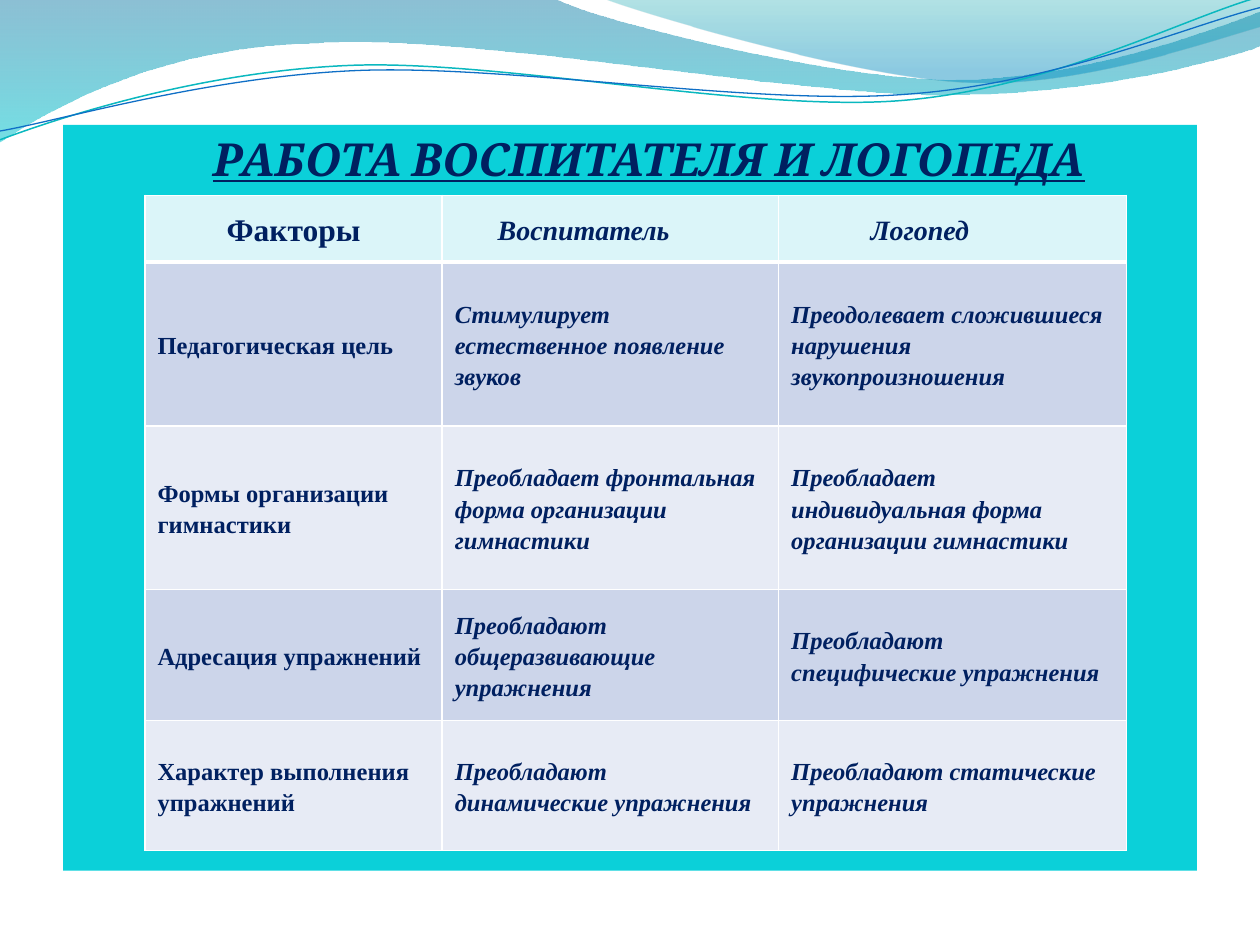
from math import cos, radians, sin

from lxml import etree
from pptx import Presentation
from pptx.dml.color import RGBColor
from pptx.enum.text import MSO_ANCHOR, MSO_AUTO_SIZE, PP_ALIGN
from pptx.oxml.ns import qn
from pptx.util import Inches, Pt

TOP, MIDDLE = MSO_ANCHOR.TOP, MSO_ANCHOR.MIDDLE
LEFT, CENTER = PP_ALIGN.LEFT, PP_ALIGN.CENTER
NO_AUTOFIT = MSO_AUTO_SIZE.NONE

COLORS = {
    "panel": "0BD0D9", "text": "002060", "border": "FFFFFF",
    "header": "DBF5F9", "odd": "CCD5EA", "even": "E7EBF5",
    "deep": "0074A1", "aqua": "00C6CF", "teal": "00A1A9", "sky": "008BBF",
    "teal_line": "0AB8BF", "blue_line": "0F6FC6",
}

TITLE = "РАБОТА ВОСПИТАТЕЛЯ И ЛОГОПЕДА"
TITLE_FORMAT = {"name": "Cambria", "size": Pt(26), "bold": True, "italic": True, "underline": True}
PANEL = (0.5, 0.99, 9, 5.92)

ROWS = [
    ("Факторы", "Воспитатель", "Логопед"),
    ("Педагогическая цель", "Стимулирует естественное появление звуков",
     "Преодолевает сложившиеся нарушения звукопроизношения"),
    ("Формы организации гимнастики", "Преобладает фронтальная форма организации гимнастики",
     "Преобладает индивидуальная форма организации гимнастики"),
    ("Адресация упражнений", "Преобладают общеразвивающие упражнения",
     "Преобладают специфические упражнения"),
    ("Характер выполнения упражнений", "Преобладают динамические упражнения",
     "Преобладают статические упражнения"),
]
COLUMN_WIDTHS = [2.36, 2.67, 2.76]
ROW_HEIGHTS = [0.53, 1.3, 1.3, 1.04, 1.03]
HEADER_SIZES = [18, 16, 16]
HEADER_INDENTS = [0, 0.34, 0.63]

WAVES = [
    {"place": (-0.01, -0.01, 10.02, 1.14), "turn": 0, "start": (0, 0),
     "steps": [(4.4, -0.01), (4.76, 0.17, 6.64, 0.63, 7.58, 0.63),
               (8.53, 0.63, 9.58, 0.26, 10, 0.09), (10.01, 0.36),
               (9.83, 0.44, 8.7, 0.76, 7.46, 0.75), (6.22, 0.75, 3.82, 0.28, 2.57, 0.34),
               (1.29, 0.36, 0.46, 0.83, -0.01, 1.13), (0, 0)],
     "stops": [(0, "deep", 45), (1, "aqua", 55)]},
    {"place": (4.79, -0.01, 5.21, 0.7), "turn": 0, "start": (4.79, -0.01),
     "steps": [(5.09, 0.11, 6.82, 0.62, 7.69, 0.65), (8.56, 0.69, 9.61, 0.32, 10, 0.21),
               (10, 0), (4.79, -0.01)],
     "stops": [(0, "teal", 30), (0.8, "sky", 45)]},
    {"place": (-0.02, 0.22, 10.02, 0.71), "turn": 357.3, "start": (0, 1.11),
     "steps": [(0.48, 0.93, 1.58, 0.57, 2.77, 0.52), (3.95, 0.47, 5.93, 0.89, 7.13, 0.8),
               (8.33, 0.71, 9.38, 0.15, 9.98, -0.02)],
     "line": ("teal_line", 0.85)},
    {"place": (-0.02, 0.3, 10.03, 0.58), "turn": 357.3, "start": (0, 1.04),
     "steps": [(0.47, 0.96, 1.64, 0.61, 2.83, 0.56), (4.03, 0.51, 5.97, 0.84, 7.17, 0.75),
               (8.36, 0.67, 9.41, 0.21, 10, 0.06)],
     "line": ("blue_line", 0.75)},
]


def color(name):
    return RGBColor.from_string(COLORS[name])


def set_place(shape, place):
    for key, value in zip(("left", "top", "width", "height"), place):
        setattr(shape, key, Inches(value))


def local_point(x, y, place, turn):
    left, top, width, height = place
    angle = radians(-turn)
    dx, dy = x - left - width / 2, y - top - height / 2
    return (Inches(dx * cos(angle) - dy * sin(angle) + width / 2),
            Inches(dx * sin(angle) + dy * cos(angle) + height / 2))


def bend(shape, wave):
    outline = shape._element.spPr.find(".//" + qn("a:path"))
    for key, value in zip(("w", "h"), wave["place"][2:]):
        outline.set(key, str(Inches(value)))
    pieces = [piece for piece in outline if piece.tag != qn("a:close")]
    for piece, step in zip(pieces, [wave["start"], *wave["steps"]]):
        if len(step) == 6:
            piece.tag = qn("a:cubicBezTo")
        for point in list(piece):
            piece.remove(point)
        for x, y in zip(step[::2], step[1::2]):
            across, down = local_point(x, y, wave["place"], wave["turn"])
            etree.SubElement(piece, qn("a:pt"), x=str(across), y=str(down))


def add_wave(page, wave):
    ends = [(Inches(step[-2]), Inches(step[-1])) for step in wave["steps"]]
    start = [Inches(value) for value in wave["start"]]
    builder = page.shapes.build_freeform(*start, scale=1.0)
    builder.add_line_segments(ends, close="stops" in wave)
    shape = builder.convert_to_shape()
    bend_ready = etree.QName(shape._element).localname == "sp"
    if bend_ready:
        bend(shape, wave)
    set_place(shape, wave["place"])
    shape.rotation = wave["turn"]
    shape.shadow.inherit = False
    if "line" in wave:
        name, width = wave["line"]
        shape.fill.background()
        shape.line.color.rgb = color(name)
        shape.line.width = Pt(width)
        return
    shape.line.fill.background()
    shape.fill.gradient()
    shape.fill.gradient_angle = 270
    for stop, (position, name, _) in zip(shape.fill.gradient_stops, wave["stops"]):
        stop.position = position
        stop.color.rgb = color(name)
    tints = shape._element.spPr.find(qn("a:gradFill")).iter(qn("a:srgbClr"))
    for tint, (_, _, opacity) in zip(list(tints), wave["stops"]):
        etree.SubElement(tint, qn("a:alpha"), val=str(opacity * 1000))


def write(frame, text, align, formats):
    para = frame.paragraphs[0]
    para.alignment = align
    span = para.add_run()
    span.text = text
    span.font.color.rgb = color("text")
    for key, value in formats.items():
        setattr(span.font, key, value)
    return para


def add_title(page):
    box = page.shapes.title
    set_place(box, PANEL)
    box.fill.solid()
    box.fill.fore_color.rgb = color("panel")
    frame = box.text_frame
    formats = {"vertical_anchor": TOP, "auto_size": NO_AUTOFIT, "word_wrap": True,
               "margin_left": Inches(0.4)}
    for key, value in formats.items():
        setattr(frame, key, value)
    write(frame, TITLE, CENTER, TITLE_FORMAT)


def add_borders(cell, row):
    widths = {"L": 1, "R": 1, "T": 3 if row == 1 else 1, "B": 3 if row == 0 else 1}
    properties = cell._tc.get_or_add_tcPr()
    for side, width in widths.items():
        line = etree.SubElement(properties, qn(f"a:ln{side}"), w=str(Pt(width)))
        fill = etree.SubElement(line, qn("a:solidFill"))
        etree.SubElement(fill, qn("a:srgbClr"), val=COLORS["border"])


def fill_cell(cell, row, column, text):
    header = row == 0
    add_borders(cell, row)
    cell.fill.solid()
    cell.fill.fore_color.rgb = color("header" if header else ("even", "odd")[row % 2])
    cell.vertical_anchor = MIDDLE
    for side in ("left", "right", "top", "bottom"):
        setattr(cell, f"margin_{side}", Inches(0.1))
    formats = {"name": "Times New Roman", "bold": True, "italic": column > 0,
               "size": Pt(HEADER_SIZES[column] if header else 14)}
    para = write(cell.text_frame, text, CENTER if header and column == 0 else LEFT, formats)
    para.line_spacing = 1.15
    if header and HEADER_INDENTS[column]:
        para._p.get_or_add_pPr().set("marL", str(Inches(HEADER_INDENTS[column])))


def add_factors_table(page):
    table = page.shapes.add_table(
        len(ROWS), len(COLUMN_WIDTHS), Inches(1.15), Inches(1.55),
        Inches(sum(COLUMN_WIDTHS)), Inches(sum(ROW_HEIGHTS))).table
    for column, width in zip(table.columns, COLUMN_WIDTHS):
        column.width = Inches(width)
    for line, height in zip(table.rows, ROW_HEIGHTS):
        line.height = Inches(height)
    for row, texts in enumerate(ROWS):
        for column, text in enumerate(texts):
            fill_cell(table.cell(row, column), row, column, text)


def main():
    deck = Presentation()
    deck.slide_width, deck.slide_height = Inches(10), Inches(7.5)
    page = deck.slides.add_slide(deck.slide_layouts.get_by_name("Title Only"))
    for wave in WAVES:
        add_wave(page, wave)
    add_title(page)
    add_factors_table(page)
    deck.save("out.pptx")


if __name__ == "__main__":
    main()
